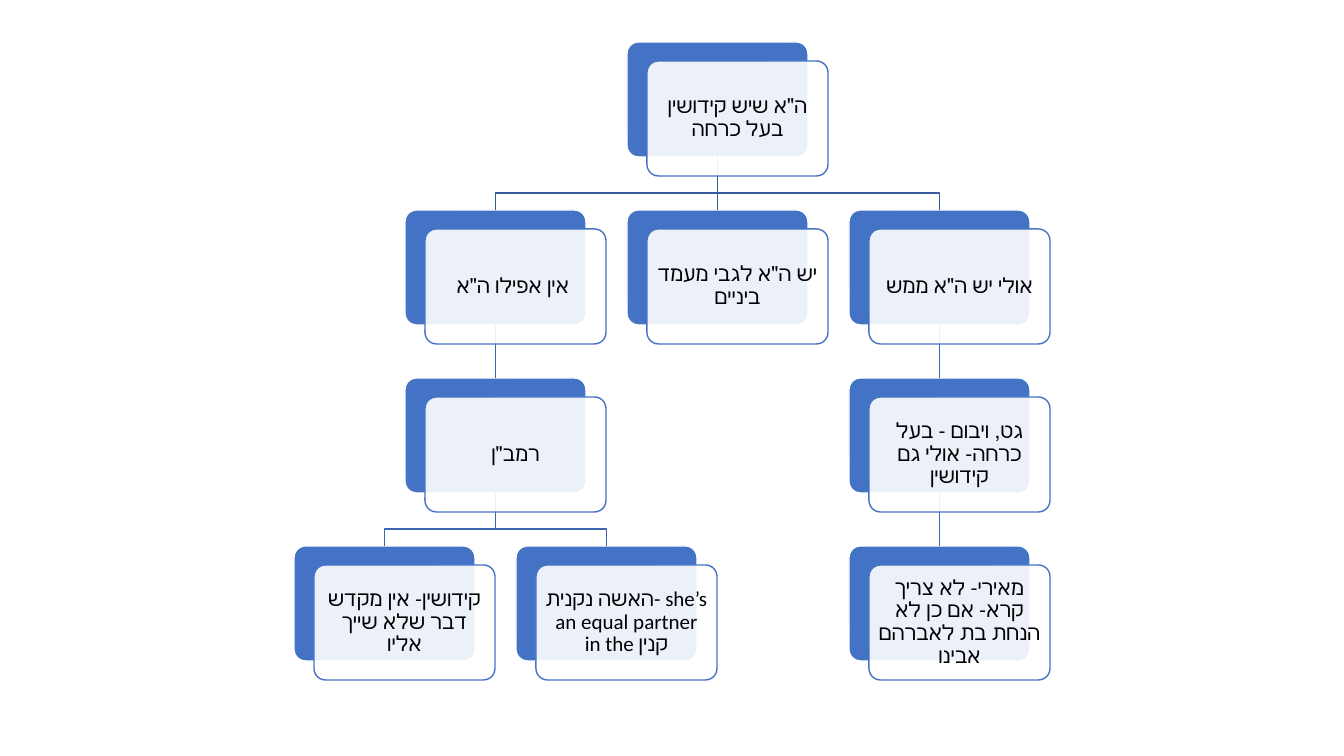
from lxml import etree
from pptx import Presentation
from pptx import util as u
from pptx.dml.color import RGBColor
from pptx.enum import shapes, text
from pptx.oxml.ns import qn

COLORS = {
    "blue": "4472C4",
    "white": "FFFFFF",
    "black": "000000",
    "root_link": "365B9D",
    "link": "3E67B2",
}
EMU_PER_PX = 914400 / 100.8

# Card grid: columns are half a card pitch apart
LEFT, TOP = 294, 42
COLUMN_STEP, ROW_STEP = 111, 168
CARD_WIDTH, CARD_HEIGHT = 181, 115
FRONT_X, FRONT_Y = 20, 19
ELBOW_DROP = 36
INSET = 6

# name: (column, row, wording)
CARDS = {
    "root": (3, 0, 'ה"א שיש קידושין בעל כרחה'),
    "none": (1, 1, 'אין אפילו ה"א '),
    "ramban": (1, 2, 'רמב"ן'),
    "object": (0, 3, "קידושין- אין מקדש דבר שלא שייך אליו"),
    "partner": (2, 3, "האשה נקנית- she’s an equal partner in the קנין"),
    "middle": (3, 1, 'יש ה"א לגבי מעמד ביניים'),
    "real": (5, 1, 'אולי יש ה"א ממש'),
    "get": (5, 2, "גט, ויבום - בעל כרחה- אולי גם קידושין"),
    "meiri": (5, 3, "מאירי- לא צריך קרא- אם כן לא הנחת בת לאברהם אבינו"),
}
LINKS = [
    ("get", "meiri"), ("real", "get"), ("root", "real"), ("root", "middle"),
    ("ramban", "partner"), ("ramban", "object"), ("none", "ramban"),
    ("root", "none"),
]


def px(value):
    return u.Emu(round(value * EMU_PER_PX))


def color(name):
    return RGBColor.from_string(COLORS[name])


def add_card(slide, column, row, fill, line, shift_x=0, shift_y=0):
    shape = slide.shapes.add_shape(
        shapes.MSO_SHAPE.ROUNDED_RECTANGLE,
        px(LEFT + column * COLUMN_STEP + shift_x),
        px(TOP + row * ROW_STEP + shift_y),
        px(CARD_WIDTH), px(CARD_HEIGHT))
    shape.adjustments[0] = 0.1
    shape.shadow.inherit = False
    shape.fill.solid()
    shape.fill.fore_color.rgb = color(fill)
    shape.line.color.rgb = color(line)
    shape.line.width = u.Pt(1)
    return shape


def add_front_card(slide, column, row, wording):
    shape = add_card(slide, column, row, "white", "blue", FRONT_X, FRONT_Y)
    # Let the blue card show through
    fill_color = shape.fill._xPr.find(qn("a:solidFill"))[0]
    etree.SubElement(fill_color, qn("a:alpha"), val="90000")

    frame = shape.text_frame
    frame.word_wrap = True
    frame.vertical_anchor = text.MSO_ANCHOR.MIDDLE
    frame.margin_left = frame.margin_right = px(INSET)
    frame.margin_top = frame.margin_bottom = px(INSET)
    paragraph = frame.paragraphs[0]
    paragraph.alignment = text.PP_ALIGN.CENTER
    paragraph.line_spacing = 0.9
    run = paragraph.add_run()
    run.text = wording
    run.font.name = "Calibri"
    run.font.size = u.Pt(15)
    run.font.color.rgb = color("black")


def add_straight_link(slide, parent, child):
    connector = slide.shapes.add_connector(
        shapes.MSO_CONNECTOR.STRAIGHT, 0, 0, 0, 0)
    connector.begin_connect(parent, 2)
    connector.end_connect(child, 0)
    etree.SubElement(connector._element.spPr, qn("a:effectLst"))
    return connector


def add_elbow_link(slide, parent, child):
    start_x = parent.left + parent.width // 2
    start_y = parent.top + parent.height
    end_x = child.left + child.width // 2
    elbow_y = start_y + px(ELBOW_DROP)
    builder = slide.shapes.build_freeform(start_x, start_y)
    builder.add_line_segments(
        [(start_x, elbow_y), (end_x, elbow_y), (end_x, child.top)],
        close=False)
    shape = builder.convert_to_shape()
    shape.shadow.inherit = False
    shape.fill.background()
    return shape


def add_link(slide, parent, child, line):
    straight = parent.left == child.left
    add = add_straight_link if straight else add_elbow_link
    link = add(slide, parent, child)
    link.line.color.rgb = color(line)
    link.line.width = u.Pt(1)


def main():
    presentation = Presentation()
    presentation.slide_width = px(1344)
    presentation.slide_height = px(756)
    slide = presentation.slides.add_slide(presentation.slide_layouts[6])

    # Blue cards at the back
    backs = {name: add_card(slide, column, row, "blue", "white")
             for name, (column, row, _) in CARDS.items()}

    # Links between levels
    for parent, child in LINKS:
        line = "root_link" if parent == "root" else "link"
        add_link(slide, backs[parent], backs[child], line)

    # White cards with the wording
    for column, row, wording in CARDS.values():
        add_front_card(slide, column, row, wording)

    presentation.save("out.pptx")


if __name__ == "__main__":
    main()
